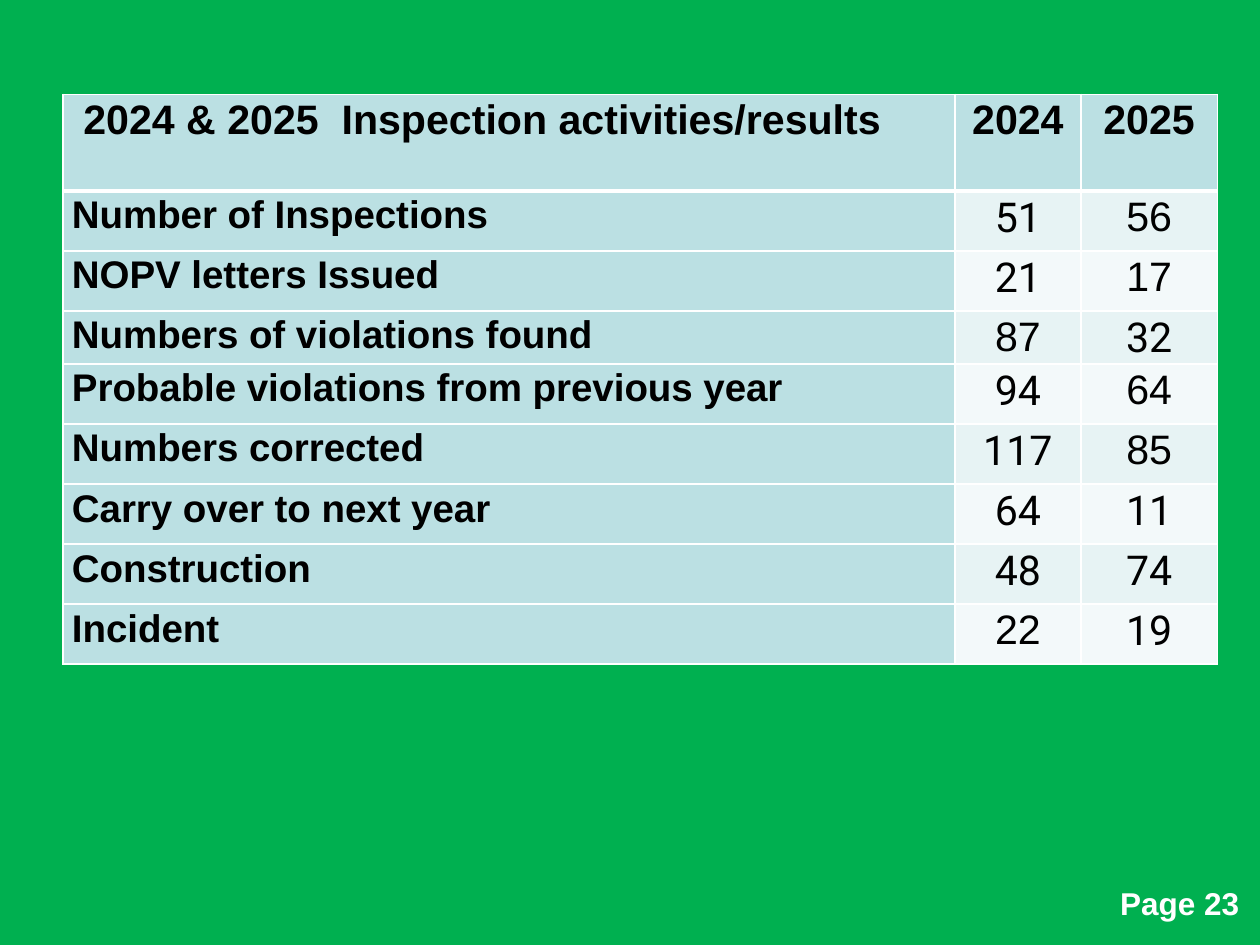
from lxml import etree
from pptx import Presentation
from pptx.dml.color import RGBColor
from pptx.enum.text import MSO_AUTO_SIZE, PP_ALIGN
from pptx.oxml.ns import qn
from pptx.util import Cm, Pt

LEFT, CENTER = PP_ALIGN.LEFT, PP_ALIGN.CENTER
FIT_SHAPE = MSO_AUTO_SIZE.SHAPE_TO_FIT_TEXT

GREEN = RGBColor(0x00, 0xB0, 0x50)
WHITE = RGBColor(0xFF, 0xFF, 0xFF)
BLACK = RGBColor(0x00, 0x00, 0x00)
TEAL = RGBColor(0xBB, 0xE0, 0xE3)
BANDS = [RGBColor(0xE7, 0xF3, 0xF4), RGBColor(0xF3, 0xF9, 0xFA)]

ARIAL, ROBOTO = "Arial", "Roboto"
COL_WIDTHS = [17.98, 2.54, 2.75]
HEADER_HEIGHT, ROW_HEIGHT, SHORT_HEIGHT = 1.95, 1.21, 1.07
SHORT_ROW = 3

HEADER = [" 2024 & 2025  Inspection activities/results", "2024", "2025"]
RESULTS = [
    ("Number of Inspections", ("51", ROBOTO), ("56", ARIAL)),
    ("NOPV letters Issued", ("21", ROBOTO), ("17", ARIAL)),
    ("Numbers of violations found", ("87", ARIAL), ("32", ROBOTO)),
    ("Probable violations from previous year", ("94", ROBOTO), ("64", ARIAL)),
    ("Numbers corrected", ("117", ROBOTO), ("85", ARIAL)),
    ("Carry over to next year", ("64", ROBOTO), ("11", ROBOTO)),
    ("Construction", ("48", ROBOTO), ("74", ROBOTO)),
    ("Incident", ("22", ARIAL), ("19", ROBOTO)),
]


def set_font(p, size, name, color, bold):
    p.font.size = Pt(size)
    p.font.name = name
    p.font.color.rgb = color
    p.font.bold = bold


def set_borders(cell, top, bottom):
    tc_pr = cell._tc.get_or_add_tcPr()
    for side, width in (("L", 1), ("R", 1), ("T", top), ("B", bottom)):
        ln = etree.SubElement(tc_pr, qn(f"a:ln{side}"), w=str(Pt(width)))
        fill = etree.SubElement(ln, qn("a:solidFill"))
        etree.SubElement(fill, qn("a:srgbClr"), val=str(WHITE))


def fill_cell(cell, text, fill, align, size=23.5, font=ARIAL, bold=True, top=1, bottom=1):
    set_borders(cell, top, bottom)
    cell.fill.solid()
    cell.fill.fore_color.rgb = fill
    cell.margin_left = cell.margin_right = Cm(0.18)
    cell.margin_top = cell.margin_bottom = 0
    p = cell.text_frame.paragraphs[0]
    p.text = text
    p.alignment = align
    p.line_spacing = 1.07
    p.space_after = Pt(8)
    set_font(p, size, font, BLACK, bold)


def add_results_table(s):
    heights = [HEADER_HEIGHT] + [ROW_HEIGHT] * len(RESULTS)
    heights[SHORT_ROW] = SHORT_HEIGHT
    table = s.shapes.add_table(
        len(heights), len(COL_WIDTHS), Cm(1.27), Cm(1.9),
        Cm(sum(COL_WIDTHS)), Cm(sum(heights)),
    ).table
    for column, width in zip(table.columns, COL_WIDTHS):
        column.width = Cm(width)
    for row, height in zip(table.rows, heights):
        row.height = Cm(height)

    for col, text in enumerate(HEADER):
        fill_cell(table.cell(0, col), text, TEAL, CENTER if col else LEFT, bottom=3)
    for row, (label, *values) in enumerate(RESULTS, 1):
        top = 3 if row == 1 else 1
        fill_cell(table.cell(row, 0), label, TEAL, LEFT, size=22, top=top)
        for col, (text, font) in enumerate(values, 1):
            fill_cell(table.cell(row, col), text, BANDS[(row - 1) % 2], CENTER,
                      font=font, bold=False, top=top)


def add_page_label(s, text):
    tf = s.shapes.add_textbox(Cm(22.33), Cm(17.7), Cm(2.97), Cm(1.02)).text_frame
    tf.word_wrap = False
    tf.auto_size = FIT_SHAPE
    p = tf.paragraphs[0]
    p.text = text
    set_font(p, 18, ARIAL, WHITE, True)


def main():
    prs = Presentation()
    prs.slide_width, prs.slide_height = Cm(25.4), Cm(19.05)
    s = prs.slides.add_slide(prs.slide_layouts[6])
    s.background.fill.solid()
    s.background.fill.fore_color.rgb = GREEN
    add_page_label(s, "Page 23")
    add_results_table(s)
    prs.save("out.pptx")


if __name__ == "__main__":
    main()
